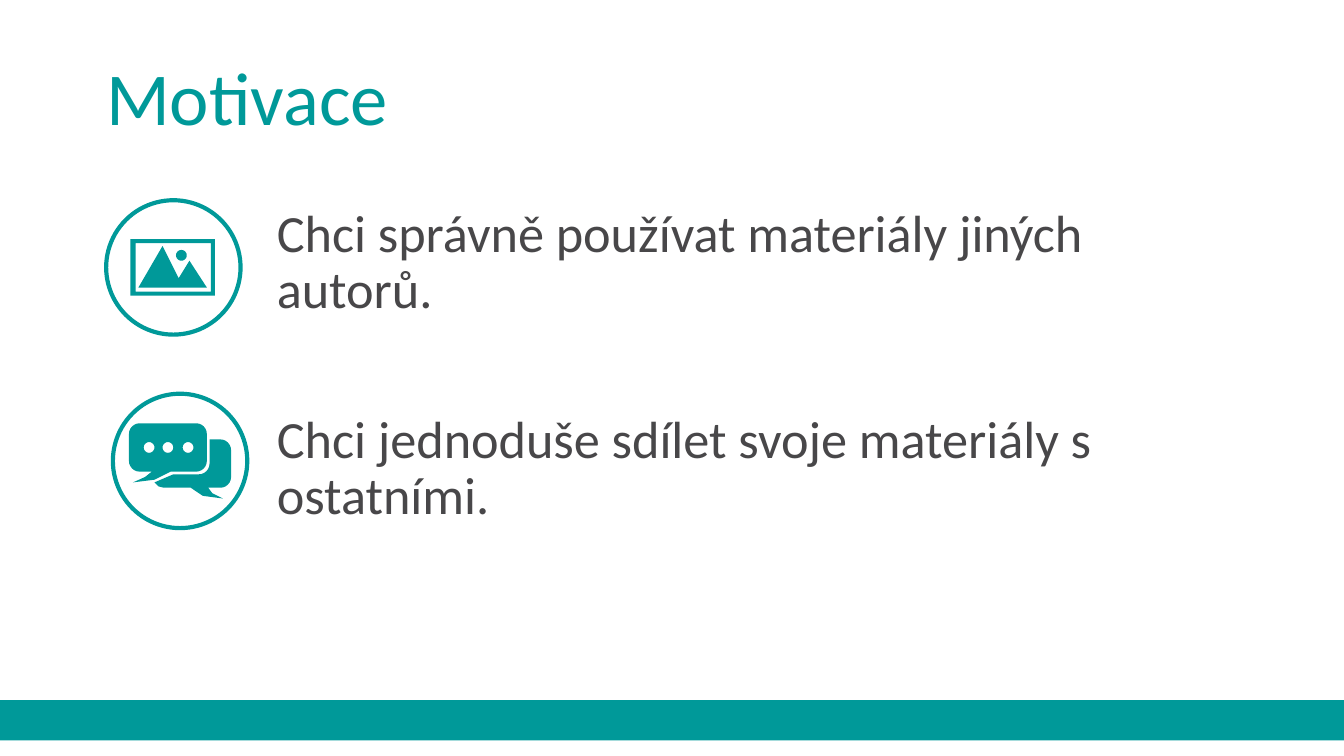
"""Build the "Motivace" slide with two statements and their round icons."""
from math import cos, radians, sin

from lxml import etree
from pptx import Presentation
from pptx.dml.color import RGBColor
from pptx.enum.shapes import MSO_SHAPE
from pptx.enum.text import MSO_ANCHOR, MSO_AUTO_SIZE, PP_ALIGN
from pptx.oxml.ns import qn
from pptx.util import Inches, Pt

RECTANGLE, OVAL = MSO_SHAPE.RECTANGLE, MSO_SHAPE.OVAL
MIDDLE, TOP = MSO_ANCHOR.MIDDLE, MSO_ANCHOR.TOP
NO_AUTOFIT, LEFT = MSO_AUTO_SIZE.NONE, PP_ALIGN.LEFT
TEAL = RGBColor(0x00, 0x99, 0x99)
GRAY = RGBColor(0x48, 0x47, 0x49)
WHITE = RGBColor(0xFF, 0xFF, 0xFF)


def write_text(box, texts, *, size, color, anchor, gap=0):
    frame = box.text_frame
    frame.word_wrap = True
    frame.auto_size = NO_AUTOFIT
    frame.vertical_anchor = anchor
    for index, text in enumerate(texts):
        para = frame.add_paragraph() if index else frame.paragraphs[0]
        properties = para._p.get_or_add_pPr()
        properties.set("marL", "0")
        properties.set("indent", "0")
        etree.SubElement(properties, qn("a:buNone"))
        para.alignment = LEFT
        para.line_spacing = 0.9
        para.space_before = Pt(gap if index else 0)
        span = para.add_run()
        span.text = text
        span.font.name = "Calibri"
        span.font.size = Pt(size)
        span.font.color.rgb = color


def arc(x, y, radius, start=0, end=360, steps=6):
    angles = [radians(start + (end - start) * step / steps) for step in range(steps + 1)]
    return [(x + radius * cos(angle), y + radius * sin(angle)) for angle in angles]


deck = Presentation()
deck.slide_width = Inches(10)
deck.slide_height = Inches(10) * 9 // 16
page = deck.slides.add_slide(deck.slide_layouts[1])

bar = page.shapes.add_shape(RECTANGLE, 0, Inches(5.21), Inches(10), Inches(0.3))
bar.shadow.inherit = False
bar.fill.solid()
bar.fill.fore_color.rgb = TEAL
bar.line.fill.background()

title, body = page.shapes.title, page.placeholders[1]
title.left, title.top, title.width, title.height = map(Inches, (0.69, 0.3, 7.56, 0.91))
write_text(title, ["Motivace"], size=40, color=TEAL, anchor=MIDDLE)

body.left, body.top, body.width, body.height = map(Inches, (1.96, 1.49, 7.17, 3.58))
statements = [
    "Chci správně používat materiály jiných autorů.",
    "Chci jednoduše sdílet svoje materiály s ostatními.",
]
write_text(body, statements, size=28, color=GRAY, anchor=TOP, gap=50)

picture_icon = [
    [(0.97, 1.78), (1.6, 1.78), (1.6, 2.2), (0.97, 2.2)],
    [(1.01, 1.81), (1.01, 2.17), (1.57, 2.17), (1.57, 1.81)],
    [(1.21, 1.83), (1.33, 2.07), (1.41, 1.94), (1.54, 2.14), (1.03, 2.14)],
    arc(1.35, 1.9, 0.04, steps=24),
]
front_bubble = [
    *arc(1.04, 3.23, 0.08, 180, 270),
    *arc(1.46, 3.23, 0.08, 270, 360),
    *arc(1.46, 3.43, 0.08, 0, 90),
    (1.27, 3.51), (1.15, 3.57), (0.99, 3.59), (1.08, 3.55), (1.13, 3.51),
    *arc(1.04, 3.43, 0.08, 90, 180),
]
back_bubble = [
    (1.56, 3.27),
    *arc(1.64, 3.35, 0.08, 270, 360),
    *arc(1.64, 3.55, 0.08, 0, 90),
    (1.55, 3.63), (1.58, 3.67), (1.66, 3.71), (1.51, 3.69), (1.42, 3.63),
    (1.22, 3.63), (1.18, 3.62), (1.15, 3.59), (1.22, 3.56), (1.29, 3.53),
    *arc(1.48, 3.45, 0.08, 90, 0),
]
dots = [arc(x, 3.33, 0.04, steps=24) for x in (1.11, 1.25, 1.4)]
chat_icon = [front_bubble, back_bubble, *dots]

for left, top, outlines in [(0.79, 1.49, picture_icon), (0.84, 2.93, chat_icon)]:
    circle = page.shapes.add_shape(OVAL, Inches(left), Inches(top), Inches(1), Inches(1))
    circle.shadow.inherit = False
    circle.fill.solid()
    circle.fill.fore_color.rgb = WHITE
    circle.line.color.rgb = TEAL
    circle.line.width = Pt(2.25)

    contours = [[(Inches(x), Inches(y)) for x, y in outline] for outline in outlines]
    builder = page.shapes.build_freeform(*contours[0][0])
    for index, contour in enumerate(contours):
        if index:
            builder.move_to(*contour[0])
        builder.add_line_segments(contour[1:], close=True)
    icon = builder.convert_to_shape()
    icon.shadow.inherit = False
    icon.fill.solid()
    icon.fill.fore_color.rgb = TEAL
    icon.line.fill.background()

deck.save("out.pptx")
